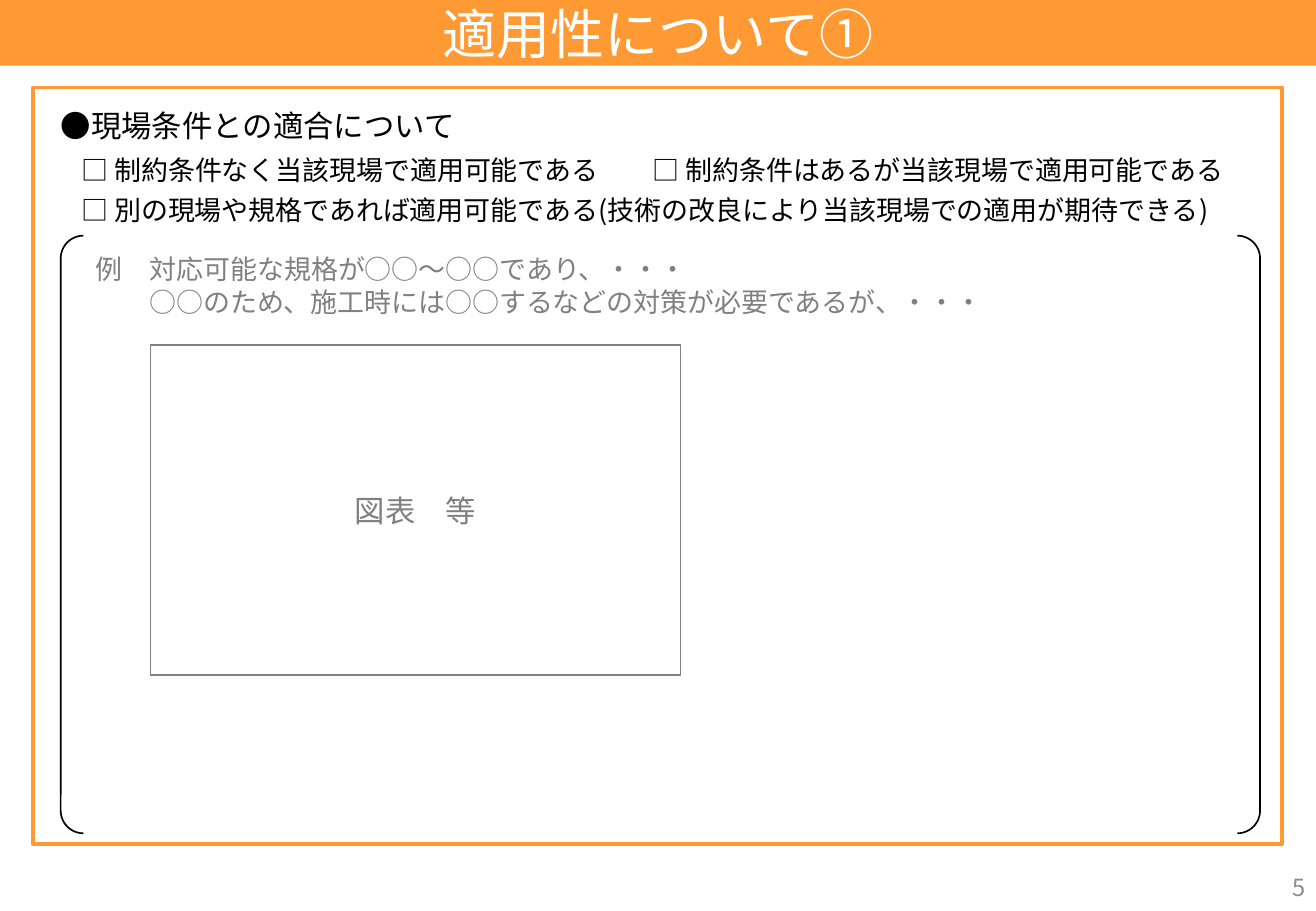
from lxml.etree import SubElement
from pptx import Presentation
from pptx.dml.color import RGBColor
from pptx.enum.shapes import MSO_SHAPE as Kind
from pptx.enum.text import MSO_ANCHOR as Anchor, MSO_AUTO_SIZE as Auto, PP_ALIGN as Align
from pptx.oxml.ns import qn
from pptx.util import Inches, Pt

WIDE, HIGH = 10.83, 7.5
BAND = 0.54
FONT = "Noto Sans CJK JP"
ORANGE, GRAY, BLACK, WHITE = "FF9933", "808080", "000000", "FFFFFF"

TITLE = "適用性について①"
LINES = [
    ("●現場条件との適合について", 18, (0.5, 0.88, 3.28, 0.3)),
    ("□ 制約条件なく当該現場で適用可能である\t□ 制約条件はあるが当該現場で適用可能である",
     16, (0.67, 1.26, 9.65, 0.27)),
    ("□ 別の現場や規格であれば適用可能である(技術の改良により当該現場での適用が期待できる)",
     16, (0.67, 1.59, 9.54, 0.27)),
]
CHECK_TAB = 4.7
SAMPLE = [
    "例　対応可能な規格が○○～○○であり、・・・",
    "○○のため、施工時には○○するなどの対策が必要であるが、・・・",
]
SAMPLE_DENT = 0.44
FIGURE = "図表　等"
PAGE = "5"


def color(code):
    return RGBColor.from_string(code)


def place(shape, box):
    shape.left, shape.top, shape.width, shape.height = map(Inches, box)


def write(shape, lines, size, tint, align=Align.LEFT, face=FONT, pad=0, wrap=False):
    frame = shape.text_frame
    frame.text = "\n".join(lines)
    frame.word_wrap = wrap
    frame.auto_size = Auto.NONE
    frame.vertical_anchor = Anchor.MIDDLE
    frame.margin_left = frame.margin_right = Inches(pad)
    frame.margin_top = frame.margin_bottom = Inches(pad / 2)
    for para in frame.paragraphs:
        para.alignment = align
        font = para.font
        font.size, font.name = Pt(size), face
        font.color.rgb = color(tint)
    for props in shape.element.iter(qn("a:defRPr")):
        SubElement(props, qn("a:ea"), typeface=FONT)
    return frame


def label(box, *args, **opts):
    shape = slide.shapes.add_textbox(*map(Inches, box))
    write(shape, *args, **opts)
    return shape


def draw(kind, box, fill=None, line=None, width=1):
    shape = slide.shapes.add_shape(kind, *map(Inches, box))
    shape.shadow.inherit = False
    if fill:
        shape.fill.solid()
        shape.fill.fore_color.rgb = color(fill)
    else:
        shape.fill.background()
    if line:
        shape.line.color.rgb = color(line)
        shape.line.width = Pt(width)
    else:
        shape.line.fill.background()
    return shape


def set_tab(shape, pos):
    for props in shape.element.iter(qn("a:pPr")):
        tabs = SubElement(props, qn("a:tabLst"))
        SubElement(tabs, qn("a:tab"), pos=str(Inches(pos)), algn="l")
        props.find(qn("a:defRPr")).addprevious(tabs)


deck = Presentation()
deck.slide_width, deck.slide_height = Inches(WIDE), Inches(HIGH)
slide = deck.slides.add_slide(deck.slide_layouts[5])

title = slide.shapes.title
place(title, (0, 0, WIDE, BAND))
write(title, [TITLE], 32, WHITE, Align.CENTER)
band = draw(Kind.RECTANGLE, (0, 0, WIDE, BAND), fill=ORANGE)
title.element.addprevious(band.element)

draw(Kind.RECTANGLE, (0.27, 0.72, 10.28, 6.23), line=ORANGE, width=2)
bracket = draw(Kind.DOUBLE_BRACKET, (0.5, 1.94, 9.87, 4.92), line=BLACK)
bracket.adjustments[0] = 0.038

for text, size, box in LINES:
    item = label(box, [text], size, BLACK)
    if "\t" in text:
        set_tab(item, CHECK_TAB)

sample = label((0.79, 2.08, 7.63, 0.54), SAMPLE, 16, GRAY)
for para in sample.text_frame.paragraphs:
    para.line_spacing = Pt(19)
last = sample.text_frame.paragraphs[-1]
last.font
for props in list(sample.element.iter(qn("a:pPr")))[-1:]:
    props.set("marL", str(Inches(SAMPLE_DENT)))
    props.set("indent", "0")

figure = draw(Kind.RECTANGLE, (1.24, 2.84, 4.36, 2.72), line=GRAY)
write(figure, [FIGURE], 18, GRAY, Align.CENTER, face="Calibri", pad=0.1, wrap=True)

label((8.4, 7.1, 2.44, 0.4), [PAGE], 14, "8C8C8C", Align.RIGHT, pad=0.1, wrap=True)

deck.save("out.pptx")
